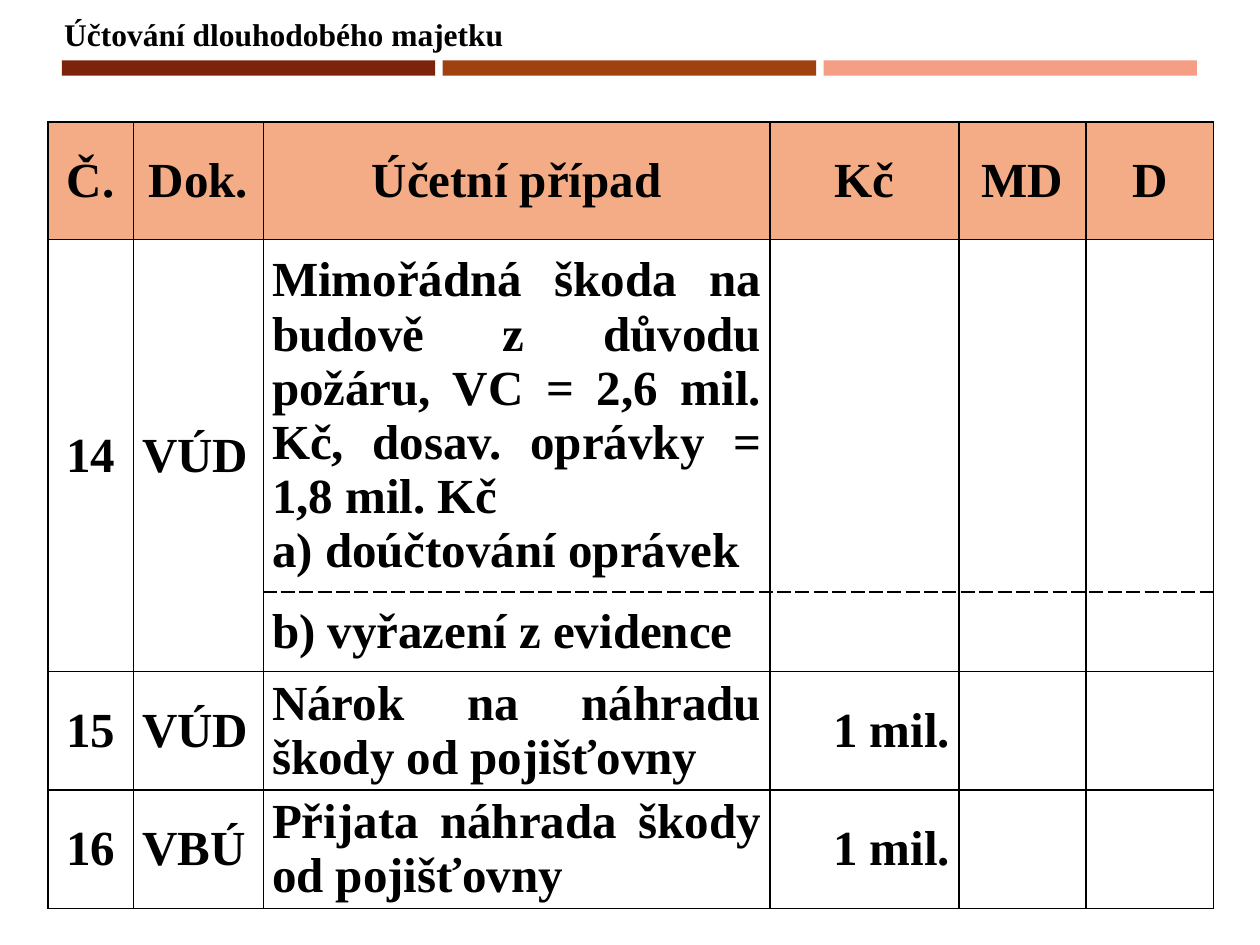
from dataclasses import dataclass

from lxml.etree import SubElement
from pptx import Presentation
from pptx.dml.color import RGBColor
from pptx.enum.shapes import MSO_SHAPE
from pptx.enum.text import MSO_ANCHOR, MSO_AUTO_SIZE, PP_ALIGN
from pptx.oxml.ns import qn
from pptx.util import Inches, Pt


@dataclass(frozen=True)
class Theme:
    font: str = "Times New Roman"
    title_size: int = 18
    table_size: int = 28
    text: str = "000000"
    border: str = "000000"
    header: str = "F3AC85"
    bars: tuple = ("7B230B", "9F4210", "F49E86")


THEME = Theme()
TITLE = "Účtování dlouhodobého majetku"
COLUMN_WIDTHS = (0.68, 1.03, 4.02, 1.5, 1.01, 1.01)
ROW_HEIGHTS = (0.93, 2.8, 0.63, 0.94, 0.94)
COLUMN_ALIGNMENTS = (PP_ALIGN.CENTER, PP_ALIGN.LEFT, PP_ALIGN.JUSTIFY,
                     PP_ALIGN.RIGHT, PP_ALIGN.CENTER, PP_ALIGN.CENTER)
ROWS = (
    ("Č.", "Dok.", "Účetní případ", "Kč", "MD", "D"),
    ("14", "VÚD",
     "Mimořádná škoda na budově z důvodu požáru, VC = 2,6 mil. Kč, "
     "dosav. oprávky = 1,8 mil. Kč\na) doúčtování oprávek", "", "", ""),
    ("", "", "b) vyřazení z evidence", "", "", ""),
    ("15", "VÚD", "Nárok na náhradu škody od pojišťovny", "1 mil.", "", ""),
    ("16", "VBÚ", "Přijata náhrada škody od pojišťovny", "1 mil.", "", ""),
)
SPLIT_ROW = 1  # the entry in this row continues in the next one
MERGED_COLUMNS = (0, 1)


def set_attributes(target, values):
    for name, value in values.items():
        setattr(target, name, value)


def write_text(text_frame, text, size, alignment):
    text_frame.text = text
    for paragraph in text_frame.paragraphs:
        paragraph.alignment = alignment
        set_attributes(paragraph.font,
                       {"name": THEME.font, "size": Pt(size), "bold": True})
        paragraph.font.color.rgb = RGBColor.from_string(THEME.text)


def add_title(slide):
    title = slide.shapes.title
    set_attributes(title, {"left": Inches(0.41), "top": Inches(0.07),
                           "width": Inches(3.72), "height": Inches(0.4)})
    set_attributes(title.text_frame, {
        "word_wrap": False,
        "auto_size": MSO_AUTO_SIZE.NONE,
        "vertical_anchor": MSO_ANCHOR.TOP,
    })
    write_text(title.text_frame, TITLE, THEME.title_size, PP_ALIGN.LEFT)


def add_bars(slide, left=0.49, right=9.5, top=0.48, height=0.12, gap=0.06):
    count = len(THEME.bars)
    width = (right - left - gap * (count - 1)) / count
    for index, color in enumerate(THEME.bars):
        bar = slide.shapes.add_shape(
            MSO_SHAPE.RECTANGLE, Inches(left + index * (width + gap)),
            Inches(top), Inches(width), Inches(height))
        bar.shadow.inherit = False
        bar.fill.solid()
        bar.fill.fore_color.rgb = RGBColor.from_string(color)
        bar.line.fill.background()


def set_borders(cell, dashed_side=None):
    properties = cell._tc.get_or_add_tcPr()
    for side in ("lnL", "lnR", "lnT", "lnB"):
        line = SubElement(properties, qn(f"a:{side}"), w=str(Pt(1)))
        fill = SubElement(line, qn("a:solidFill"))
        SubElement(fill, qn("a:srgbClr"), val=THEME.border)
        dash = "sysDash" if side == dashed_side else "solid"
        SubElement(line, qn("a:prstDash"), val=dash)


def dashed_side(row, column):
    """Name the border that lies on the dashed line inside the split entry."""
    if column in MERGED_COLUMNS:
        return None
    return {SPLIT_ROW: "lnB", SPLIT_ROW + 1: "lnT"}.get(row)


def format_cell(cell, text, row, column):
    set_attributes(cell, {
        "margin_left": Inches(0.07), "margin_right": Inches(0.07),
        "margin_top": 0, "margin_bottom": 0,
        "vertical_anchor": MSO_ANCHOR.MIDDLE,
    })
    set_borders(cell, dashed_side(row, column))
    is_header = row == 0
    if is_header:
        cell.fill.solid()
        cell.fill.fore_color.rgb = RGBColor.from_string(THEME.header)
    else:
        cell.fill.background()
    alignment = PP_ALIGN.CENTER if is_header else COLUMN_ALIGNMENTS[column]
    write_text(cell.text_frame, text, THEME.table_size, alignment)


def add_entries_table(slide):
    frame = slide.shapes.add_table(
        len(ROWS), len(COLUMN_WIDTHS), Inches(0.38), Inches(0.97),
        Inches(sum(COLUMN_WIDTHS)), Inches(sum(ROW_HEIGHTS)))
    table = frame.table
    set_attributes(table, {"first_row": False, "horz_banding": False})
    for column, width in zip(table.columns, COLUMN_WIDTHS):
        column.width = Inches(width)
    for row, height in zip(table.rows, ROW_HEIGHTS):
        row.height = Inches(height)
    for row, texts in enumerate(ROWS):
        for column, text in enumerate(texts):
            format_cell(table.cell(row, column), text, row, column)
    for column in MERGED_COLUMNS:
        table.cell(SPLIT_ROW, column).merge(table.cell(SPLIT_ROW + 1, column))


def main():
    presentation = Presentation()
    set_attributes(presentation, {"slide_width": Inches(10),
                                  "slide_height": Inches(7.5)})
    title_only = presentation.slide_layouts.get_by_name("Title Only")
    slide = presentation.slides.add_slide(title_only)
    add_bars(slide)
    add_title(slide)
    add_entries_table(slide)
    presentation.save("out.pptx")


if __name__ == "__main__":
    main()
